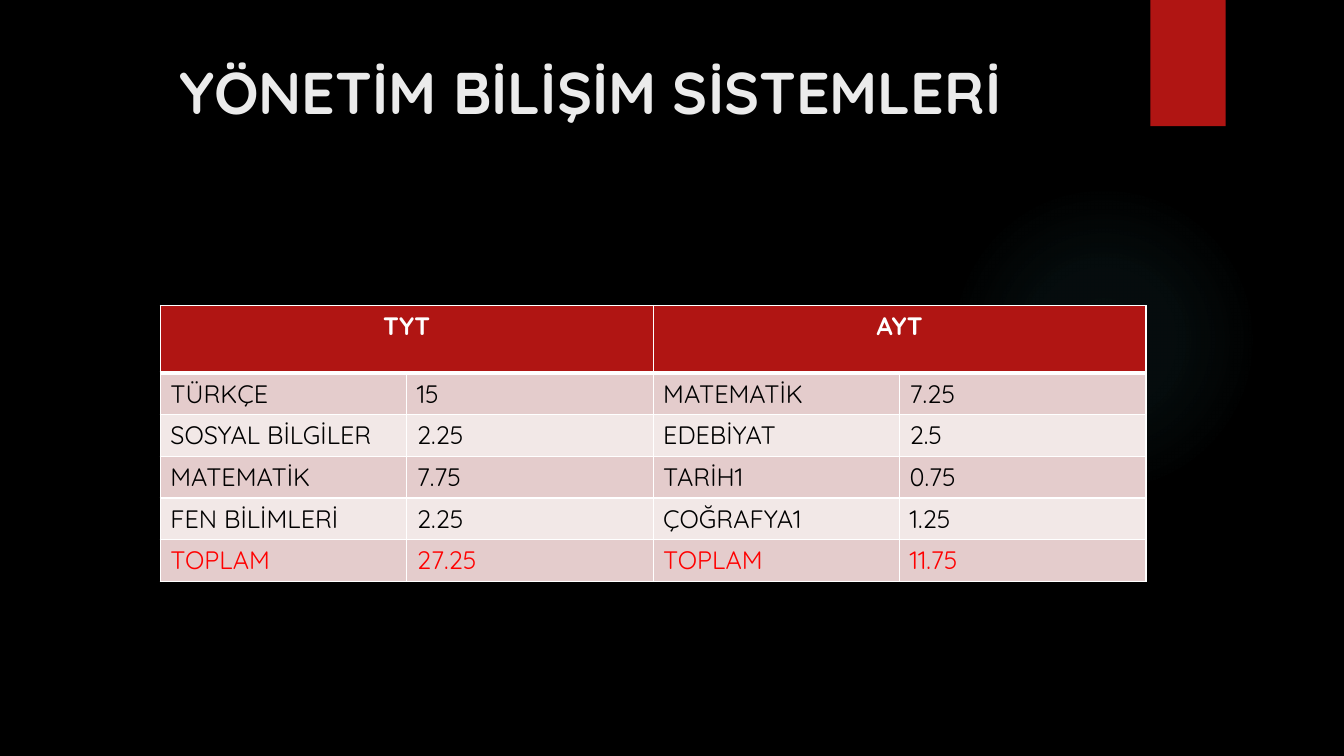
from lxml import etree
from pptx import Presentation
from pptx.dml.color import RGBColor
from pptx.enum import shapes, text
from pptx.oxml import ns
from pptx.util import Cm, Pt

TITLE = "YÖNETİM BİLİŞİM SİSTEMLERİ"
HEADS = ["TYT", "AYT"]
ROWS = [
    ("TÜRKÇE", "15", "MATEMATİK", "7.25"),
    ("SOSYAL BİLGİLER", "2.25", "EDEBİYAT", "2.5"),
    ("MATEMATİK", "7.75", "TARİH1", "0.75"),
    ("FEN BİLİMLERİ", "2.25", "ÇOĞRAFYA1", "1.25"),
    ("TOPLAM", "27.25", "TOPLAM", "11.75"),
]
GLOW = [(0, 7), (36, 6), (69, 0)]

FONT = "Quicksand"
BLACK = RGBColor(0x00, 0x00, 0x00)
WHITE = RGBColor(0xFF, 0xFF, 0xFF)
PALE = RGBColor(0xEB, 0xEB, 0xEB)
BRICK = RGBColor(0xB0, 0x15, 0x13)
RED = RGBColor(0xFF, 0x00, 0x00)
BANDS = [RGBColor(0xE4, 0xCC, 0xCC), RGBColor(0xF2, 0xE8, 0xE7)]
TEAL = RGBColor(0x50, 0xB9, 0xC1)

COL = 6.21
HEAD = 1.7
ROW = 1.05


def write(frame, words, size=18, color=BLACK, bold=False, align=text.PP_ALIGN.LEFT):
    par = frame.paragraphs[0]
    par.alignment = align
    run = par.add_run()
    run.text = words
    font = run.font
    font.name, font.size, font.bold = FONT, Pt(size), bold
    font.color.rgb = color


def shape(slide, kind, left, top, width, height, color):
    item = slide.shapes.add_shape(kind, Cm(left), Cm(top), Cm(width), Cm(height))
    item.shadow.inherit = False
    item.fill.solid()
    item.fill.fore_color.rgb = color
    item.line.fill.background()
    return item


def glow(item):
    stops = "".join(
        f'<a:gs pos="{pos * 1000}"><a:srgbClr val="{TEAL}">'
        f'<a:alpha val="{alpha * 1000}"/></a:srgbClr></a:gs>'
        for pos, alpha in GLOW
    )
    grad = etree.fromstring(
        f'<a:gradFill {ns.nsdecls("a")} rotWithShape="1"><a:gsLst>{stops}</a:gsLst>'
        '<a:path path="circle"><a:fillToRect l="50000" t="50000" r="50000" b="50000"/>'
        "</a:path></a:gradFill>"
    )
    props = item._element.spPr
    props.replace(props.find(ns.qn("a:solidFill")), grad)


def paint(cell, color, above, below):
    props = cell._tc.get_or_add_tcPr()
    for side, width in (("L", 1), ("R", 1), ("T", above), ("B", below)):
        props.append(etree.fromstring(
            f'<a:ln{side} {ns.nsdecls("a")} w="{Pt(width)}"><a:solidFill>'
            f'<a:srgbClr val="{WHITE}"/></a:solidFill></a:ln{side}>'
        ))
    cell.fill.solid()
    cell.fill.fore_color.rgb = color


def scores(slide):
    count = len(ROWS[0])
    grid = slide.shapes.add_table(
        len(ROWS) + 1, count, Cm(4.04), Cm(7.7),
        Cm(COL * count), Cm(HEAD + ROW * len(ROWS)),
    ).table
    grid.first_row = grid.horz_banding = False
    for col in grid.columns:
        col.width = Cm(COL)
    for n, row in enumerate(grid.rows):
        row.height = Cm(ROW if n else HEAD)
    for n in range(count):
        paint(grid.cell(0, n), BRICK, 1, 3)
    for n, head in enumerate(HEADS):
        cell = grid.cell(0, 2 * n)
        cell.merge(grid.cell(0, 2 * n + 1))
        write(cell.text_frame, head, color=WHITE, bold=True, align=text.PP_ALIGN.CENTER)
    for r, row in enumerate(ROWS, 1):
        for c, words in enumerate(row):
            cell = grid.cell(r, c)
            paint(cell, BANDS[(r - 1) % 2], 3 if r == 1 else 1, 1)
            write(cell.text_frame, words, color=RED if r == len(ROWS) else BLACK)


def main():
    deck = Presentation()
    deck.slide_width, deck.slide_height = Cm(33.87), Cm(19.05)
    slide = deck.slides.add_slide(deck.slide_layouts[6])
    slide.background.fill.solid()
    slide.background.fill.fore_color.rgb = BLACK

    kinds = shapes.MSO_SHAPE
    glow(shape(slide, kinds.OVAL, 23.9, 4.65, 7.82, 7.82, TEAL))
    shape(slide, kinds.RECTANGLE, 28.99, 0, 1.9, 3.18, BRICK)

    box = slide.shapes.add_textbox(Cm(1.8), Cm(1.27), Cm(26.14), Cm(3.89))
    frame = box.text_frame
    frame.word_wrap = True
    frame.vertical_anchor = text.MSO_ANCHOR.TOP
    write(frame, TITLE, size=42, color=PALE, bold=True, align=text.PP_ALIGN.CENTER)
    scores(slide)
    deck.save("out.pptx")


if __name__ == "__main__":
    main()
